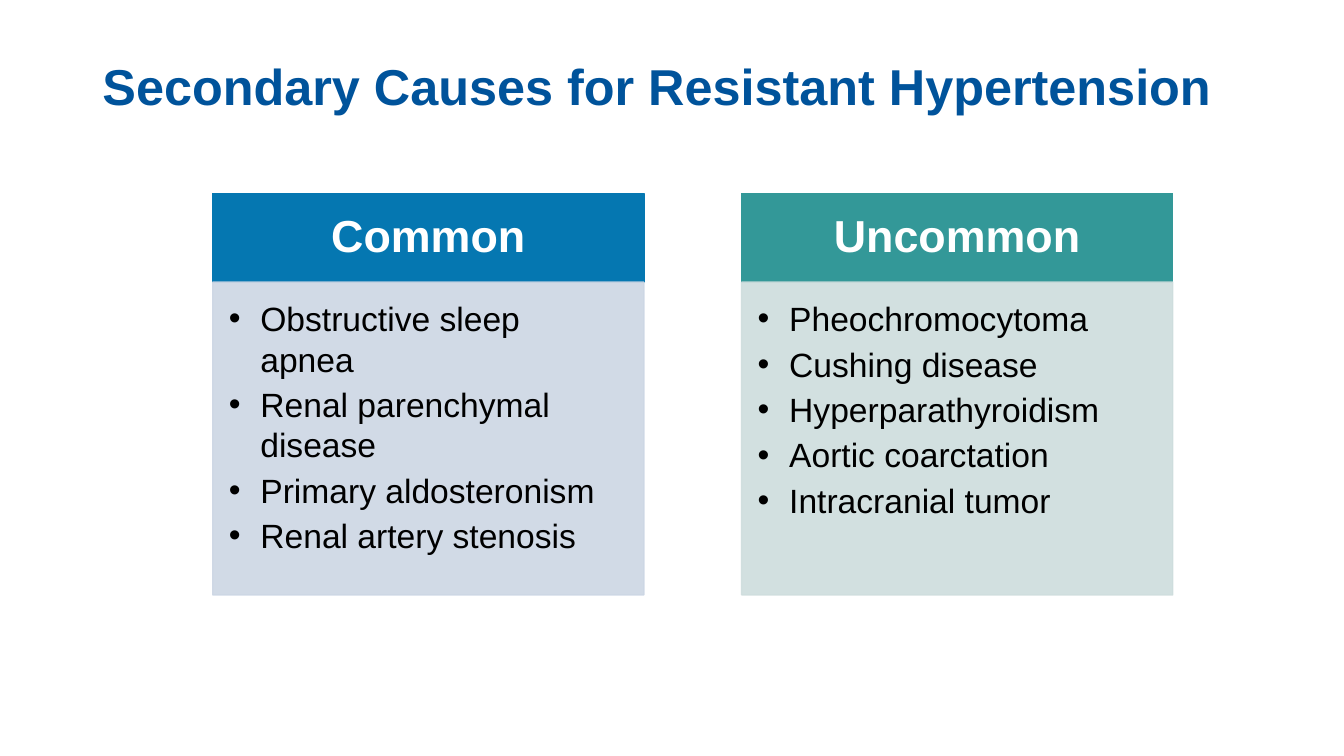
"""Build a slide comparing common and uncommon causes of resistant hypertension."""
from lxml.etree import SubElement
from pptx import Presentation
from pptx.dml.color import RGBColor
from pptx.enum.shapes import MSO_SHAPE
from pptx.enum.text import MSO_ANCHOR, PP_ALIGN
from pptx.oxml.ns import qn
from pptx.util import Pt

COLOURS = {
    "title": "00539B",
    "common": "0577B1",
    "common_body": "CCD6E4",
    "uncommon": "339898",
    "uncommon_body": "CEDDDD",
    "white": "FFFFFF",
    "black": "000000",
}
CAUSES = [
    ("Common", "common", [
        "Obstructive sleep apnea",
        "Renal parenchymal disease",
        "Primary aldosteronism",
        "Renal artery stenosis",
    ]),
    ("Uncommon", "uncommon", [
        "Pheochromocytoma",
        "Cushing disease",
        "Hyperparathyroidism",
        "Aortic coarctation",
        "Intracranial tumor",
    ]),
]
HEADER_HEIGHT = 63.5


def colour(name):
    """Return the named colour."""
    return RGBColor.from_string(COLOURS[name])


def write(paragraph, text, size, color, bold=False, align=PP_ALIGN.LEFT,
          line_spacing=1.0, space_after=0, bullet_indent=0):
    """Fill a paragraph with formatted text, bulleted when indented."""
    if bullet_indent:
        paragraph.level = 1
        properties = paragraph._p.get_or_add_pPr()
        properties.set("marL", str(Pt(bullet_indent)))
        properties.set("indent", str(-Pt(bullet_indent)))
        SubElement(properties, qn("a:buFont"), typeface="Arial")
        SubElement(properties, qn("a:buChar"), char="•")
    paragraph.alignment = align
    paragraph.line_spacing = line_spacing
    paragraph.space_before = Pt(0)
    paragraph.space_after = Pt(space_after)
    run = paragraph.add_run()
    run.text = text
    run.font.name = "Arial"
    run.font.size = Pt(size)
    run.font.bold = bold
    run.font.color.rgb = colour(color)


def set_frame(frame, anchor, margins):
    """Set wrapping, anchor and left, top, right and bottom margins."""
    frame.word_wrap = True
    frame.vertical_anchor = anchor
    (frame.margin_left, frame.margin_top,
     frame.margin_right, frame.margin_bottom) = map(Pt, margins)


def add_panel(slide, box, color, opacity=100):
    """Add a filled rectangle with a matching outline."""
    shape = slide.shapes.add_shape(MSO_SHAPE.RECTANGLE, *map(Pt, box))
    shape.shadow.inherit = False
    shape.fill.solid()
    shape.fill.fore_color.rgb = colour(color)
    shape.line.color.rgb = colour(color)
    shape.line.width = Pt(0.85)
    if opacity < 100:
        for element in shape._element.spPr.iter(qn("a:srgbClr")):
            SubElement(element, qn("a:alpha"), val=str(opacity * 1000))
    return shape


def add_title(slide, box, text):
    """Place and format the title placeholder."""
    title = slide.shapes.title
    title.left, title.top, title.width, title.height = map(Pt, box)
    set_frame(title.text_frame, MSO_ANCHOR.BOTTOM, (7.2, 3.6, 7.2, 3.6))
    write(title.text_frame.paragraphs[0], text, 36, "title", bold=True,
          line_spacing=0.9)


def add_cause_column(slide, box, heading, color, causes):
    """Add a heading panel above a bulleted panel."""
    left, top, width, height = box
    header = add_panel(slide, (left, top, width, HEADER_HEIGHT), color)
    set_frame(header.text_frame, MSO_ANCHOR.MIDDLE, (16, 9, 16, 9))
    write(header.text_frame.paragraphs[0], heading, 32, "white", bold=True,
          align=PP_ALIGN.CENTER, line_spacing=0.9)

    body = add_panel(slide, (left, top + HEADER_HEIGHT, width, height - HEADER_HEIGHT),
                     f"{color}_body", opacity=90)
    frame = body.text_frame
    set_frame(frame, MSO_ANCHOR.TOP, (11.5, 11.5, 16, 17))
    for index, cause in enumerate(causes):
        paragraph = frame.add_paragraph() if index else frame.paragraphs[0]
        write(paragraph, cause, 24, "black", space_after=3.6, bullet_indent=22.5)


def main():
    """Create and save the presentation."""
    presentation = Presentation()
    presentation.slide_width, presentation.slide_height = Pt(960), Pt(540)
    slide = presentation.slides.add_slide(presentation.slide_layouts[5])
    add_title(slide, (66, 0, 883.5, 87), "Secondary Causes for Resistant Hypertension")
    for index, (heading, color, causes) in enumerate(CAUSES):
        add_cause_column(slide, (152 + index * 377.75, 138, 308, 287),
                         heading, color, causes)
    presentation.save("out.pptx")


if __name__ == "__main__":
    main()
